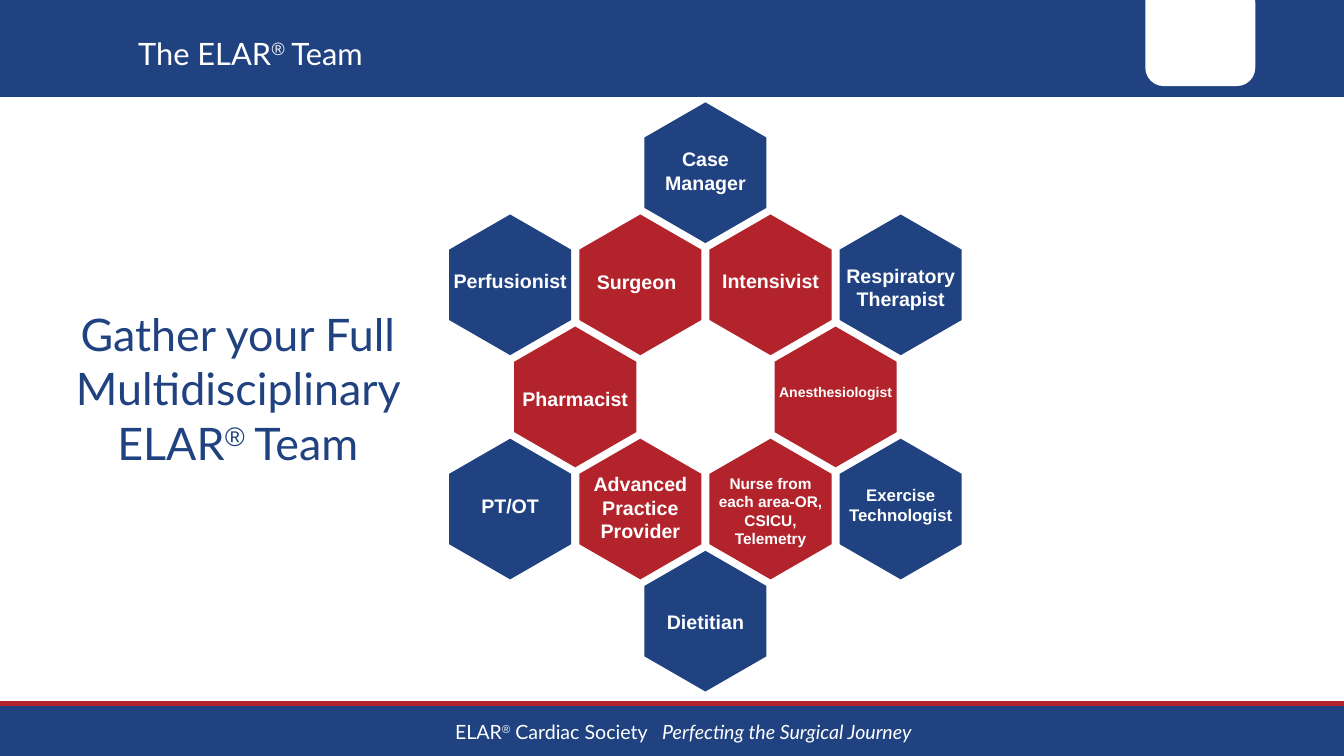
from dataclasses import dataclass

from pptx import Presentation
from pptx.dml.color import RGBColor
from pptx.enum.shapes import MSO_SHAPE
from pptx.enum.text import MSO_ANCHOR, MSO_AUTO_SIZE, PP_ALIGN
from pptx.util import Cm, Pt

RECTANGLE, ROUNDED = MSO_SHAPE.RECTANGLE, MSO_SHAPE.ROUNDED_RECTANGLE
LEFT, CENTER = PP_ALIGN.LEFT, PP_ALIGN.CENTER
TOP, MIDDLE = MSO_ANCHOR.TOP, MSO_ANCHOR.MIDDLE
NO_AUTOFIT = MSO_AUTO_SIZE.NONE

NAVY, RED, WHITE = "204281", "B2232B", "FFFFFF"
SLIDE_W, SLIDE_H = 67.72, 38.1

# Honeycomb grid: half-column and row steps, in cm
GRID_LEFT, GRID_TOP = 22.63, 5.16
COLUMN_STEP, ROW_STEP = 3.28, 5.65
HEX_W, HEX_H = 6.15, 7.09


@dataclass
class Piece:
    """A stretch of text with one look."""
    text: str
    size: float
    font: str = "Lato"
    color: str = WHITE
    bold: bool = False
    italic: bool = False
    raised: bool = False


@dataclass
class Role:
    """A team member's cell; label_drop runs from the hexagon's top."""
    label: str
    column: int
    row: int
    color: str
    label_drop: float
    size: float = 28
    label_w: float = 7.85
    label_h: float = 1.45
    label_shift: float = 0


ROLES = [
    Role("Pharmacist", 1, 2, RED, 2.89),
    Role("Surgeon", 2, 1, RED, 2.65, label_shift=-0.19),
    Role("Advanced Practice Provider", 2, 3, RED, 1.56, label_w=5.77, label_h=5.05),
    Role("Anesthesiologist", 5, 2, RED, 2.74, size=20, label_h=1.12),
    Role("Intensivist", 4, 1, RED, 2.6),
    Role("Nurse from each area-OR, CSICU, Telemetry", 4, 3, RED, 1.66,
         size=22, label_w=6.15, label_h=5.21),
    Role("Perfusionist", 0, 1, NAVY, 2.63),
    Role("PT/OT", 0, 3, NAVY, 2.66),
    Role("Exercise Technologist", 6, 3, NAVY, 2.2, size=24, label_h=2.49),
    Role("Dietitian", 3, 4, NAVY, 2.85),
    Role("Respiratory Therapist", 6, 1, NAVY, 2.35, label_h=2.64),
    Role("Case Manager", 3, 0, NAVY, 2.13, label_w=6.58, label_h=2.64),
]


def rgb(value: str) -> RGBColor:
    return RGBColor.from_string(value)


def paint(shape, color: str) -> None:
    shape.shadow.inherit = False
    shape.fill.solid()
    shape.fill.fore_color.rgb = rgb(color)
    shape.line.fill.background()


def add_block(slide, kind, left: float, top: float, width: float, height: float,
              color: str):
    block = slide.shapes.add_shape(kind, Cm(left), Cm(top), Cm(width), Cm(height))
    paint(block, color)
    return block


def write(frame, pieces: list[Piece], align=CENTER, anchor=TOP) -> None:
    frame.word_wrap = True
    frame.auto_size = NO_AUTOFIT
    frame.vertical_anchor = anchor
    paragraph = frame.paragraphs[0]
    paragraph.alignment = align
    for piece in pieces:
        run = paragraph.add_run()
        run.text = piece.text
        run.font.name = piece.font
        run.font.size = Pt(piece.size)
        run.font.bold = piece.bold
        run.font.italic = piece.italic
        run.font.color.rgb = rgb(piece.color)
        if piece.raised:
            run._r.get_or_add_rPr().set("baseline", "30000")


def add_text(slide, left: float, top: float, width: float, height: float,
             pieces: list[Piece], anchor=TOP):
    box = slide.shapes.add_textbox(Cm(left), Cm(top), Cm(width), Cm(height))
    write(box.text_frame, pieces, anchor=anchor)
    return box


def registered(size: float, color: str = WHITE) -> Piece:
    return Piece("®", size, "Arial", color, italic=True, raised=True)


def add_hexagon(slide, left: float, top: float, color: str) -> None:
    middle, right = left + HEX_W / 2, left + HEX_W
    shoulder, hip, bottom = top + HEX_H / 4, top + HEX_H * 3 / 4, top + HEX_H
    corners = [(right, shoulder), (right, hip), (middle, bottom),
               (left, hip), (left, shoulder)]
    outline = slide.shapes.build_freeform(Cm(middle), Cm(top))
    outline.add_line_segments([(Cm(x), Cm(y)) for x, y in corners], close=True)
    paint(outline.convert_to_shape(), color)


def add_role(slide, role: Role) -> None:
    left = GRID_LEFT + role.column * COLUMN_STEP
    top = GRID_TOP + role.row * ROW_STEP
    add_hexagon(slide, left, top, role.color)
    label_left = left + (HEX_W - role.label_w) / 2 + role.label_shift
    add_text(slide, label_left, top + role.label_drop, role.label_w, role.label_h,
             [Piece(role.label, role.size, "Arial", bold=True)])


def main() -> None:
    deck = Presentation()
    deck.slide_width, deck.slide_height = Cm(SLIDE_W), Cm(SLIDE_H)
    slide = deck.slides.add_slide(deck.slide_layouts[5])

    # Header band with its white tab, and footer band
    add_block(slide, RECTANGLE, 0, -0.71, SLIDE_W, 5.59, NAVY)
    tab = add_block(slide, ROUNDED, 57.71, -1.4, 5.54, 5.74, WHITE)
    tab.adjustments[0] = 0.167
    add_block(slide, RECTANGLE, 0, 35.56, SLIDE_W, 2.54, NAVY)
    add_block(slide, RECTANGLE, 0, 35.33, SLIDE_W, 0.25, RED)
    footer = add_text(slide, 3.4, 36.27, 62.05, 1.19, [
        Piece("ELAR", 28), registered(28), Piece(" Cardiac Society   ", 28),
        Piece("Perfecting the Surgical Journey", 28, italic=True),
    ], MIDDLE).text_frame
    footer.margin_left = footer.margin_right = 0
    footer.margin_top = footer.margin_bottom = 0

    # Title, brought in front of the header band
    title = slide.shapes.title
    title.left, title.top = Cm(6.71), Cm(1.68)
    title.width, title.height = Cm(50.32), Cm(2.21)
    write(title.text_frame, [Piece("The ELAR", 44), registered(44), Piece(" Team", 44)],
          LEFT, MIDDLE)
    title.text_frame.paragraphs[0].line_spacing = 0.9
    slide.shapes._spTree.append(title._element)

    # Call to action
    add_text(slide, 2.77, 15.32, 18.42, 8.46, [
        Piece("Gather your Full Multidisciplinary ELAR", 64, color=NAVY),
        registered(66, NAVY), Piece(" Team", 64, color=NAVY),
    ])

    # Team honeycomb
    for role in ROLES:
        add_role(slide, role)

    deck.save("out.pptx")


if __name__ == "__main__":
    main()
